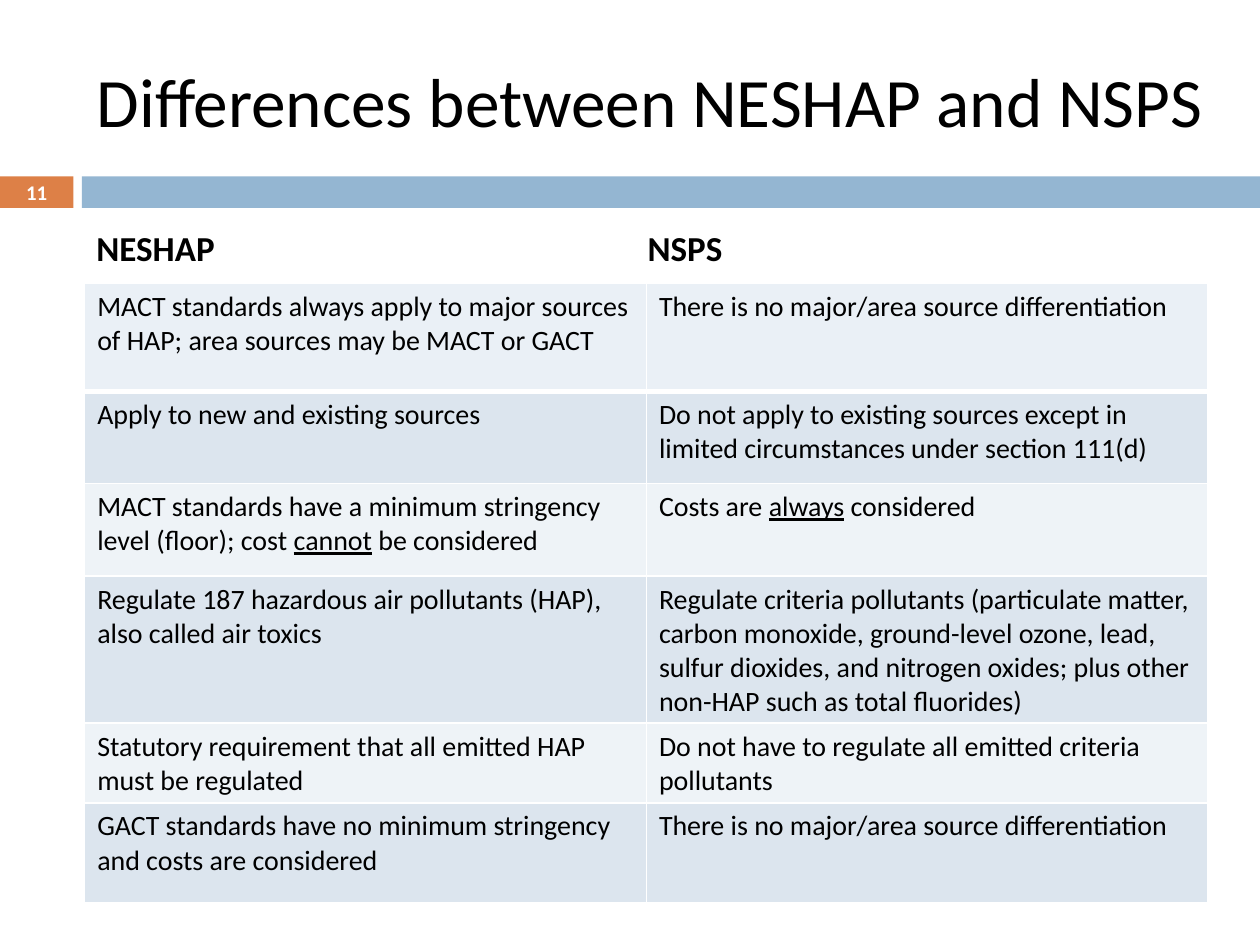
from lxml.etree import SubElement
from pptx import Presentation
from pptx.dml.color import RGBColor
from pptx.enum.shapes import MSO_SHAPE as Shape
from pptx.enum.text import MSO_ANCHOR as Anchor, MSO_AUTO_SIZE as AutoSize, PP_ALIGN as Align
from pptx.oxml.ns import qn
from pptx.util import Pt

FONT = "Calibri"
BLACK, WHITE = "000000", "FFFFFF"
ORANGE, BLUE = "DD8047", "94B6D2"
FIRST_ROW, DARK_ROW, LIGHT_ROW = "EAF0F6", "DCE5EE", "EEF3F7"

# Each cell is a list of (text, underlined) runs
ROWS = [
    (61.6, [("MACT standards always apply to major sources of HAP; "
             "area sources may be MACT or GACT", False)],
     [("There is no major/area source differentiation", False)]),
    (52.8, [("Apply to new and existing sources", False)],
     [("Do not apply to existing sources except in limited circumstances "
       "under section 111(d)", False)]),
    (52.8, [("MACT standards have a minimum stringency level (floor); cost ", False),
            ("cannot", True), (" be considered", False)],
     [("Costs are ", False), ("always", True), (" considered", False)]),
    (80, [("Regulate 187 hazardous air pollutants (HAP), also called air toxics", False)],
     [("Regulate criteria pollutants (particulate matter, carbon monoxide, "
       "ground-level ozone, lead, sulfur dioxides, and nitrogen oxides; plus other "
       "non-HAP such as total fluorides)", False)]),
    (43.2, [("Statutory requirement that all emitted HAP must be regulated", False)],
     [("Do not have to regulate all emitted criteria pollutants", False)]),
    (57, [("GACT standards have no minimum stringency and costs are considered", False)],
     [("There is no major/area source differentiation", False)]),
]


def color(hex_code):
    return RGBColor.from_string(hex_code)


def place(part, box):
    part.left, part.top, part.width, part.height = map(Pt, box)


def add_run(paragraph, text, size, hex_code=BLACK, bold=False, underline=False):
    run = paragraph.add_run()
    run.text = text
    font = run.font
    font.name, font.size, font.bold = FONT, Pt(size), bold
    font.color.rgb = color(hex_code)
    if underline:
        font.underline = True


def add_bar(slide, box, hex_code):
    bar = slide.shapes.add_shape(Shape.RECTANGLE, *map(Pt, box))
    bar.shadow.inherit = False
    bar.fill.solid()
    bar.fill.fore_color.rgb = color(hex_code)
    bar.line.fill.background()
    return bar


def add_title(slide, box, text):
    title = slide.shapes.title
    place(title, box)
    frame = title.text_frame
    frame.word_wrap = True
    frame.auto_size = AutoSize.NONE
    frame.vertical_anchor = Anchor.MIDDLE
    paragraph = frame.paragraphs[0]
    paragraph.alignment = Align.LEFT
    add_run(paragraph, text, 39.6)


def add_number_band(slide, box, number):
    left, top, width, height = box
    number_width, gap = 42, 4.8
    number_bar = add_bar(slide, (left, top, number_width, height), ORANGE)
    start = number_width + gap
    add_bar(slide, (left + start, top, width - start, height), BLUE)

    frame = number_bar.text_frame
    frame.margin_top = frame.margin_bottom = 0
    frame.vertical_anchor = Anchor.MIDDLE
    frame.paragraphs[0].alignment = Align.CENTER
    add_run(frame.paragraphs[0], number, 11.9, WHITE, bold=True)


def add_column_heads(slide, box, heads, tab_at):
    frame = slide.shapes.add_textbox(*map(Pt, box)).text_frame
    frame.word_wrap = True
    paragraph = frame.paragraphs[0]
    add_run(paragraph, "\t".join(heads), 20, bold=True)
    # The tab stop sets where the second head starts
    stops = SubElement(paragraph._p.get_or_add_pPr(), qn("a:tabLst"))
    SubElement(stops, qn("a:tab"), pos=str(Pt(tab_at)), algn="l")


def set_borders(cell, top, bottom):
    props = cell._tc.get_or_add_tcPr()
    for side, width in (("L", 1), ("R", 1), ("T", top), ("B", bottom)):
        line = SubElement(props, qn(f"a:ln{side}"), w=str(Pt(width)))
        SubElement(SubElement(line, qn("a:solidFill")), qn("a:srgbClr"), val=WHITE)


def add_comparison(slide, box, rows):
    table = slide.shapes.add_table(len(rows), 2, *map(Pt, box)).table
    table.first_row = table.horz_banding = False
    for column in table.columns:
        column.width = Pt(box[2] / 2)
    for index, (height, *texts) in enumerate(rows):
        table.rows[index].height = Pt(height)
        band = DARK_ROW if index % 2 else LIGHT_ROW
        for column, runs in enumerate(texts):
            cell = table.cell(index, column)
            # A thicker rule divides the first row from the rest
            set_borders(cell, top=3 if index == 1 else 1, bottom=3 if index == 0 else 1)
            cell.fill.solid()
            cell.fill.fore_color.rgb = color(band if index else FIRST_ROW)
            for text, underlined in runs:
                add_run(cell.text_frame.paragraphs[0], text, 16, underline=underlined)


def main():
    deck = Presentation()
    deck.slide_width, deck.slide_height = Pt(720), Pt(540)
    slide = deck.slides.add_slide(deck.slide_layouts[5])

    add_number_band(slide, (0, 100.8, 720, 18), "11")
    add_title(slide, (48, 18, 660, 78), "Differences between NESHAP and NSPS")
    add_column_heads(slide, (48, 126, 642, 32), ("NESHAP", "NSPS"), 315)
    add_comparison(slide, (48.4, 162, 642, 354), ROWS)

    deck.save("out.pptx")


if __name__ == "__main__":
    main()
